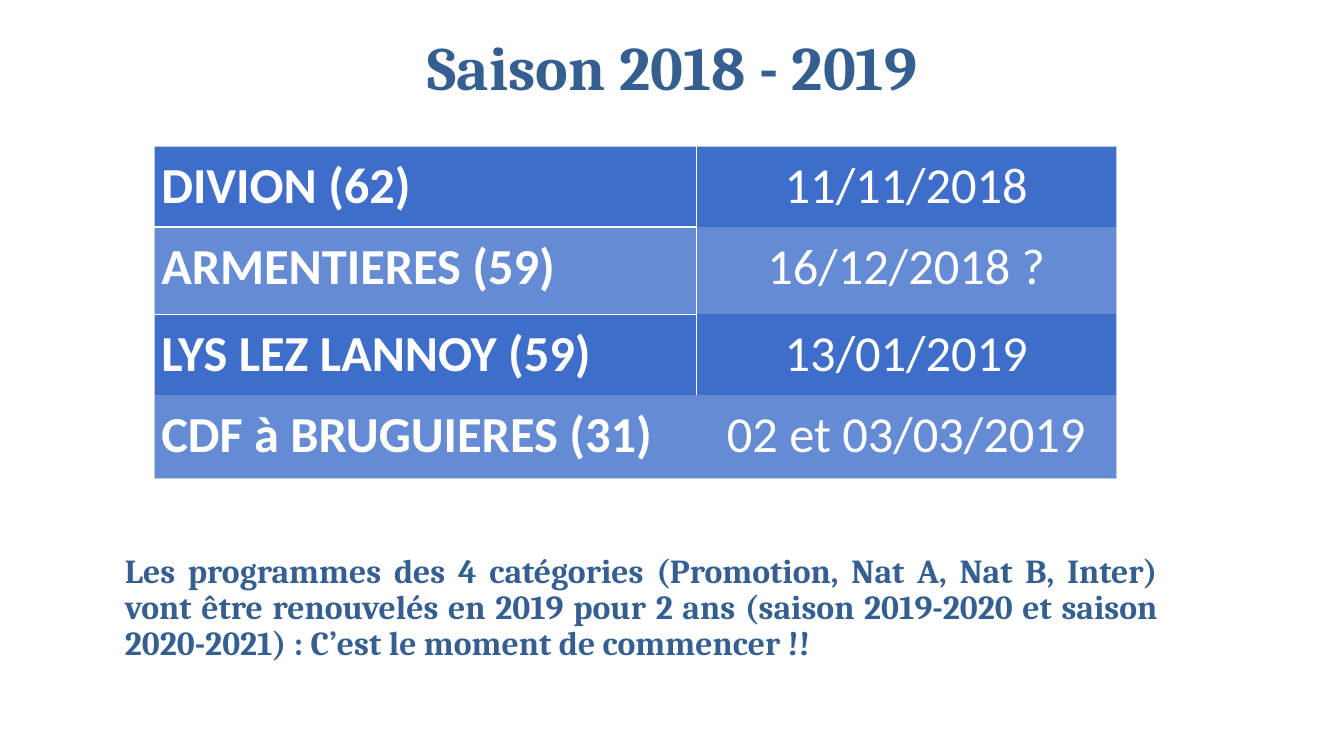
from dataclasses import dataclass

from lxml import etree
from pptx import Presentation
from pptx.dml.color import RGBColor
from pptx.enum.text import MSO_ANCHOR, MSO_AUTO_SIZE, PP_ALIGN
from pptx.oxml.ns import qn
from pptx.util import Pt

LEFT, CENTER, JUSTIFY = PP_ALIGN.LEFT, PP_ALIGN.CENTER, PP_ALIGN.JUSTIFY
MIDDLE = MSO_ANCHOR.MIDDLE
NO_FIT = MSO_AUTO_SIZE.NONE
SCALE = 9144
TITLE_ONLY = 5
NO_STYLE = "{2D5ABB26-0587-4C30-8999-92F81FD0307C}"


@dataclass(frozen=True)
class Theme:
    ink: str = "365F91"
    white: str = "FFFFFF"
    dark: str = "3E6EC9"
    light: str = "658BD4"
    edge: str = "C1C9E4"
    serif: str = "Cambria"
    sans: str = "Calibri"
    title: int = 44
    cell: int = 36
    note: int = 24


THEME = Theme()
DATES = [
    ("DIVION (62)", "11/11/2018"),
    ("ARMENTIERES (59)", "16/12/2018 ?"),
    ("LYS LEZ LANNOY (59)", "13/01/2019"),
    ("CDF à BRUGUIERES (31)", "02 et 03/03/2019"),
]
WIDTHS = [538, 416]
HEIGHTS = [80, 87, 80, 83]
NOTE = (
    "Les programmes des 4 catégories (Promotion, Nat A, Nat B, Inter) "
    "vont être renouvelés en 2019 pour 2 ans (saison 2019-2020 et saison "
    "2020-2021) : C’est le moment de commencer !!"
)


def px(count):
    return count * SCALE


def set_text(frame, text, size, font, color, align, space, bold=True):
    frame.text = text
    para = frame.paragraphs[0]
    para.alignment = align
    para.line_spacing = space
    para.space_before = Pt(0)
    style = para.runs[0].font
    style.size = Pt(size)
    style.name = font
    style.bold = bold
    style.color.rgb = RGBColor.from_string(color)


def set_block(shape, text, size, align):
    frame = shape.text_frame
    frame.word_wrap = True
    frame.auto_size = NO_FIT
    frame.vertical_anchor = MIDDLE
    set_text(frame, text, size, THEME.serif, THEME.ink, align, 0.9)


def add_title(slide, text, left, top, width, height):
    title = slide.shapes.title
    title.left, title.top = px(left), px(top)
    title.width, title.height = px(width), px(height)
    set_block(title, text, THEME.title, CENTER)


def add_note(slide, text, left, top, width, height):
    box = slide.shapes.add_textbox(px(left), px(top), px(width), px(height))
    set_block(box, text, THEME.note, JUSTIFY)


def add_edge(cell, side, color, weight):
    props = cell._tc.get_or_add_tcPr()
    line = etree.SubElement(props, qn(f"a:ln{side}"), w=str(Pt(weight)))
    fill = etree.SubElement(line, qn("a:solidFill"))
    etree.SubElement(fill, qn("a:srgbClr"), val=color)


def set_edges(cell, row, col):
    last = len(DATES) - 1
    outer = (THEME.edge, 0.5)
    inner = (THEME.white, 1)
    if col == 0:
        add_edge(cell, "L", *outer)
        if row < last:
            add_edge(cell, "R", *inner)
    else:
        if row < last:
            add_edge(cell, "L", *inner)
        add_edge(cell, "R", *outer)
    if row == 0:
        add_edge(cell, "T", *outer)
    elif row == 1 and col == 0:
        add_edge(cell, "T", THEME.white, 1.5)
    if row == 0 and col == 0:
        add_edge(cell, "B", THEME.white, 1.5)
    elif row == last:
        add_edge(cell, "B", *outer)


def set_cell(cell, text, row, col):
    set_edges(cell, row, col)
    cell.fill.solid()
    shade = THEME.light if row % 2 else THEME.dark
    cell.fill.fore_color.rgb = RGBColor.from_string(shade)
    cell.margin_left = cell.margin_right = px(7)
    cell.margin_top = cell.margin_bottom = 0
    align = CENTER if col else LEFT
    set_text(cell.text_frame, text, THEME.cell, THEME.sans, THEME.white,
             align, 1.15, bold=col == 0)


def add_dates(slide, left, top):
    table = slide.shapes.add_table(
        len(DATES), len(WIDTHS), px(left), px(top),
        px(sum(WIDTHS)), px(sum(HEIGHTS))).table
    table.first_row = table.horz_banding = False
    table._tbl.tblPr.find(qn("a:tableStyleId")).text = NO_STYLE
    for column, width in zip(table.columns, WIDTHS):
        column.width = px(width)
    for line, height in zip(table.rows, HEIGHTS):
        line.height = px(height)
    for row, texts in enumerate(DATES):
        for col, text in enumerate(texts):
            set_cell(table.cell(row, col), text, row, col)


def main():
    deck = Presentation()
    deck.slide_width, deck.slide_height = px(1333), px(750)
    slide = deck.slides.add_slide(deck.slide_layouts[TITLE_ONLY])
    add_title(slide, "Saison 2018 - 2019", 92, -35, 1150, 211)
    add_dates(slide, 153, 145)
    add_note(slide, NOTE, 114, 539, 1044, 129)
    deck.save("out.pptx")


if __name__ == "__main__":
    main()
